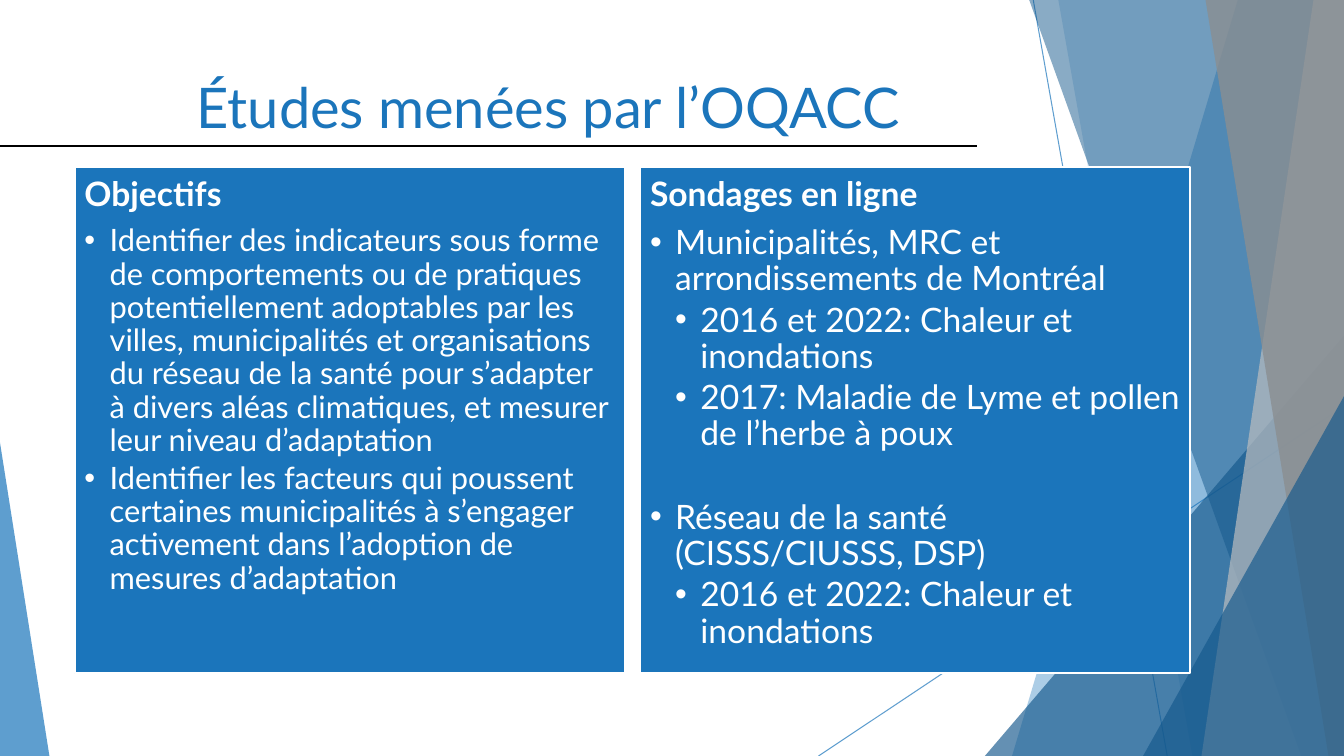
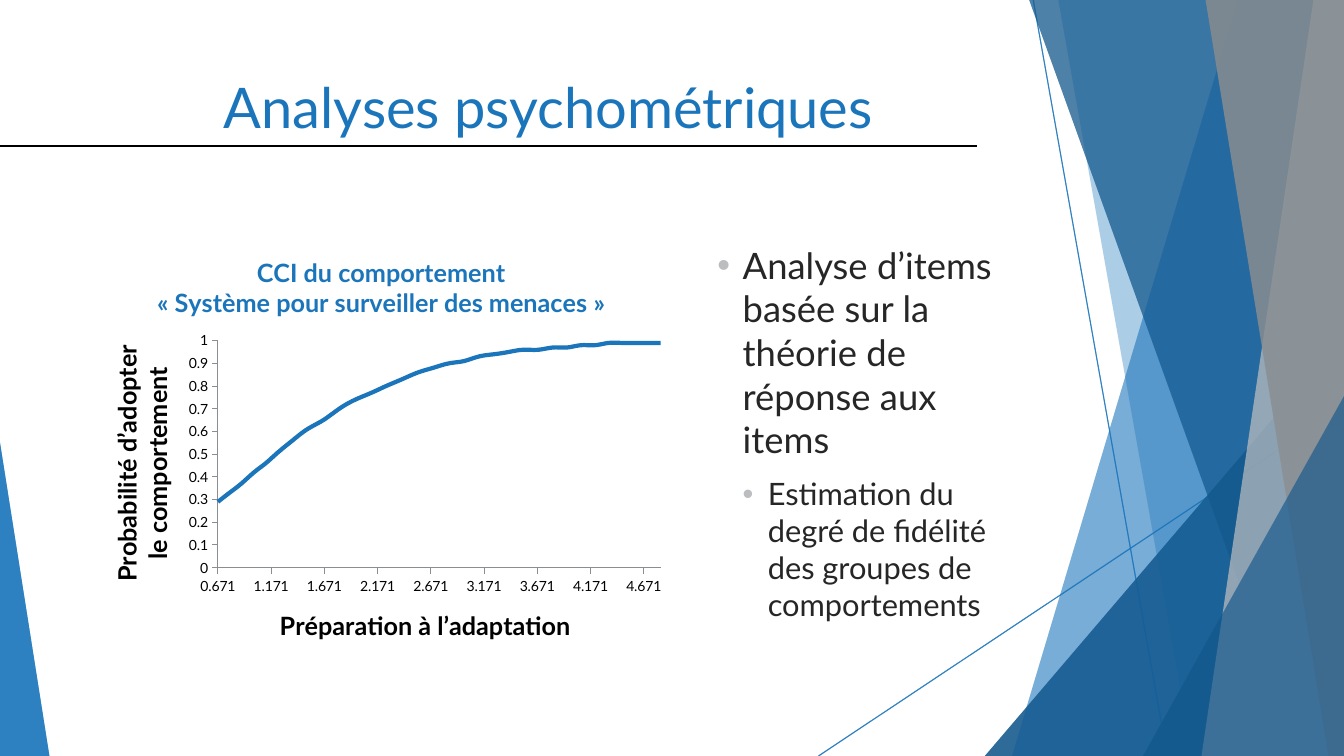
from lxml import etree
from pptx import Presentation
from pptx import util as u
from pptx.chart import data
from pptx.dml.color import RGBColor
from pptx.enum import chart as ch, shapes, text
from pptx.oxml import ns

BLUE = RGBColor(0x1B, 0x75, 0xBB)
NAVY = RGBColor(0x14, 0x58, 0x8C)
SILVER = RGBColor(0xBB, 0xBD, 0xBF)
GREY = RGBColor(0x8A, 0x8E, 0x91)
INK = RGBColor(0x26, 0x26, 0x26)
BLACK = RGBColor(0, 0, 0)
WHITE = RGBColor(0xFF, 0xFF, 0xFF)
FONT = "Lato"
W, H = u.Inches(13.333), u.Inches(7.5)
MARGIN = 5.55
TITLE_BOX = (MARGIN, 8.93, 70.5, 19.2)
CARD = (MARGIN, 22.13, 40.95, 66.93)
CARD_PITCH = 42.08
BODY_TOP = 31.47
CHART_BOX = (6.68, BODY_TOP, 43.35, 56.67)
TEXT_BOX = (52.65, BODY_TOP, 24, 56.53)
PLOT_SHARES = {"x": 0.22, "y": 0.24, "w": 0.76, "h": 0.53}

LINES = [(76.88, 0, 86.85, 100), (100, 53.73, 60.9, 100)]
BACK_BANDS = [(92.1, 75.3, BLUE, 36), (78.75, 88.73, BLUE, 20)]
FRONT_BANDS = [(76.58, 96.83, NAVY, 50), (97.73, 89.4, SILVER, 70), (89.7, 98.85, GREY, 80)]

OBJECTIVES = [
    (1, "Identifier des indicateurs sous forme de comportements ou de pratiques "
        "potentiellement adoptables par les villes, municipalités et organisations du "
        "réseau de la santé pour s’adapter à divers aléas climatiques, et mesurer leur "
        "niveau d’adaptation", 0),
    (1, "Identifier les facteurs qui poussent certaines municipalités à s’engager "
        "activement dans l’adoption de mesures d’adaptation", 0),
]
SURVEYS = [
    (1, "Municipalités, MRC et arrondissements de Montréal", 0),
    (2, "2016 et 2022: Chaleur et inondations", 0),
    (2, "2017: Maladie de Lyme et pollen de l’herbe à poux", 0),
    (1, "Réseau de la santé (CISSS/CIUSSS, DSP)", 30),
    (2, "2016 et 2022: Chaleur et inondations", 0),
]
CARDS = [("Objectifs", OBJECTIVES, 22), ("Sondages en ligne", SURVEYS, 24)]
READINESS = [0.671, 0.78, 0.89, 1.01, 1.12, 1.24, 1.37, 1.51, 1.66, 1.81, 1.96,
             2.11, 2.25, 2.4, 2.55, 2.69, 2.84, 2.98, 3.12, 3.26, 3.4, 3.54,
             3.68, 3.82, 3.95, 4.08, 4.21, 4.34, 4.47, 4.6, 4.72, 4.83]
PROBABILITY = [0.29, 0.33, 0.37, 0.42, 0.46, 0.51, 0.56, 0.61, 0.65, 0.7, 0.74,
               0.77, 0.8, 0.83, 0.86, 0.88, 0.9, 0.91, 0.93, 0.94, 0.95, 0.96,
               0.96, 0.97, 0.97, 0.98, 0.98, 0.99, 0.99, 0.99, 0.99, 0.99]


def across(share):
    return int(W * share / 100)


def down(share):
    return int(H * share / 100)


def box(x, y, w, h):
    return across(x), down(y), across(w), down(h)


def assign(obj, **values):
    for name, value in values.items():
        setattr(obj, name, value)


def style_font(font, size, color, bold=False):
    assign(font, name=FONT, size=u.Pt(size), bold=bold)
    font.color.rgb = color


def set_alpha(sp, alpha):
    color = sp.element.spPr.find(".//" + ns.qn("a:srgbClr"))
    etree.SubElement(color, ns.qn("a:alpha"), val=str(alpha * 1000))


def paint(sp, color, alpha):
    sp.shadow.inherit = False
    sp.fill.solid()
    sp.fill.fore_color.rgb = color
    sp.line.fill.background()
    set_alpha(sp, alpha)


def add_line(tree, x1, y1, x2, y2, color, width):
    sp = tree.add_connector(shapes.MSO_CONNECTOR.STRAIGHT,
                            across(x1), down(y1), across(x2), down(y2))
    sp.line.color.rgb = color
    sp.line.width = u.Pt(width)
    etree.SubElement(sp.element.spPr, ns.qn("a:effectLst"))
    return sp


def add_band(tree, top_x, bottom_x, color, alpha):
    outline = tree.build_freeform(across(top_x), 0)
    outline.add_line_segments([(W, 0), (W, H), (across(bottom_x), H)], close=True)
    paint(outline.convert_to_shape(), color, alpha)


def add_triangle(tree, left, top, width, apex, color, alpha):
    sp = tree.add_shape(shapes.MSO_SHAPE.ISOSCELES_TRIANGLE,
                        *box(left, top, width, 100 - top))
    sp.adjustments[0] = apex
    paint(sp, color, alpha)


def add_facets(s):
    group = s.shapes.add_group_shape()
    tree = group.shapes
    for ends in LINES:
        set_alpha(add_line(tree, *ends, BLUE, 0.75), 70)
    for band in BACK_BANDS:
        add_band(tree, *band)
    add_triangle(tree, 73.28, 44.4, 26.72, 1, NAVY, 66)
    for band in FRONT_BANDS:
        add_band(tree, *band)
    add_triangle(tree, 85.05, 52.4, 14.95, 1, NAVY, 66)
    add_triangle(tree, 0, 58.53, 3.68, 0, BLUE, 70)
    return group


def decorate_layout(layout, s):
    rule = add_line(s.shapes, 0, 19.33, 72.68, 19.33, BLACK, 1)
    for position, sp in enumerate((add_facets(s), rule), start=2):
        layout.shapes.element.insert(position, sp.element)


def set_title(s, words):
    sp = s.shapes.title
    left, top, width, height = box(*TITLE_BOX)
    assign(sp, left=left, top=top, width=width, height=height)
    tf = sp.text_frame
    tf.text = words
    assign(tf, vertical_anchor=text.MSO_ANCHOR.TOP, word_wrap=True)
    p = tf.paragraphs[0]
    p.alignment = text.PP_ALIGN.CENTER
    style_font(p.runs[0].font, 40, BLUE)


def add_paragraph(tf, words, size, color, level=0, bold=False, bullet_color=None, **spacing):
    p = tf.paragraphs[0] if not tf.text else tf.add_paragraph()
    p.alignment = text.PP_ALIGN.LEFT
    if level:
        pPr = p._p.get_or_add_pPr()
        pPr.set("marL", str(u.Inches(0.25 * level)))
        pPr.set("indent", str(-u.Inches(0.25)))
        if bullet_color:
            holder = etree.SubElement(pPr, ns.qn("a:buClr"))
            etree.SubElement(holder, ns.qn("a:srgbClr"), val=str(bullet_color))
        etree.SubElement(pPr, ns.qn("a:buFont"), typeface="Arial")
        etree.SubElement(pPr, ns.qn("a:buChar"), char="•")
    assign(p, **spacing)
    r = p.add_run()
    r.text = words
    style_font(r.font, size, color, bold)


def add_card(s, column, heading, items, size):
    x, y, w, h = CARD
    sp = s.shapes.add_shape(shapes.MSO_SHAPE.RECTANGLE, *box(x + column * CARD_PITCH, y, w, h))
    sp.shadow.inherit = False
    sp.fill.solid()
    sp.fill.fore_color.rgb = BLUE
    sp.line.color.rgb = WHITE
    sp.line.width = u.Pt(1.5)
    tf = sp.text_frame
    inset = u.Inches(0.1)
    assign(tf, word_wrap=True, vertical_anchor=text.MSO_ANCHOR.TOP, margin_left=inset,
           margin_right=inset, margin_top=inset, margin_bottom=inset)
    add_paragraph(tf, heading, 24, WHITE, bold=True, line_spacing=0.9, space_after=u.Pt(8.4))
    for level, words, gap in items:
        add_paragraph(tf, words, size, WHITE, level, line_spacing=0.9,
                      space_before=u.Pt(gap), space_after=u.Pt(size * 0.15))


def write_chart_title(tf, words, color):
    tf.text = words
    for p in tf.paragraphs:
        style_font(p.runs[0].font, 18, color, True)


def format_axis(axis, words, low, high, step):
    assign(axis, minimum_scale=low, maximum_scale=high, major_unit=step,
           has_major_gridlines=False, major_tick_mark=ch.XL_TICK_MARK.OUTSIDE,
           minor_tick_mark=ch.XL_TICK_MARK.NONE)
    axis.format.line.color.rgb = GREY
    style_font(axis.tick_labels.font, 10, BLACK)
    write_chart_title(axis.axis_title.text_frame, words, BLACK)


def place_plot(chart):
    area = chart.element.find(".//" + ns.qn("c:plotArea"))
    for old in area.findall(ns.qn("c:layout")):
        area.remove(old)
    layout = etree.Element(ns.qn("c:layout"))
    area.insert(0, layout)
    manual = etree.SubElement(layout, ns.qn("c:manualLayout"))
    settings = {"layoutTarget": "inner", "xMode": "edge", "yMode": "edge", **PLOT_SHARES}
    for name, value in settings.items():
        etree.SubElement(manual, ns.qn("c:" + name), val=str(value))


def add_curve(s):
    cd = data.XyChartData()
    points = cd.add_series("Series 1")
    for x, y in zip(READINESS, PROBABILITY):
        points.add_data_point(x, y)
    chart = s.shapes.add_chart(ch.XL_CHART_TYPE.XY_SCATTER_SMOOTH_NO_MARKERS,
                               *box(*CHART_BOX), cd).chart
    chart.has_legend = False
    style_font(chart.font, 10, BLACK)
    write_chart_title(chart.chart_title.text_frame,
                      "CCI du comportement\n«\u00a0Système pour surveiller des menaces\u00a0»", BLUE)
    format_axis(chart.category_axis, "Préparation à l’adaptation", 0.671, 4.83, 0.5)
    format_axis(chart.value_axis, "Probabilité d’adopter\nle comportement", 0, 1, 0.1)
    plot = chart.plots[0]
    plot.vary_by_categories = False
    line = plot.series[0].format.line
    line.color.rgb = BLUE
    line.width = u.Pt(3)
    chart.element.find(".//" + ns.qn("c:smooth")).set("val", "1")
    place_plot(chart)


def add_analysis(s):
    tf = s.shapes.add_textbox(*box(*TEXT_BOX)).text_frame
    tf.word_wrap = True
    add_paragraph(tf, "Analyse d’items basée sur la théorie de réponse aux items",
                  26, INK, 1, bullet_color=SILVER)
    add_paragraph(tf, "Estimation du degré de fidélité des groupes de comportements",
                  22, INK, 2, bullet_color=SILVER, space_before=u.Pt(10))


def main():
    prs = Presentation()
    assign(prs, slide_width=W, slide_height=H)
    layout = prs.slide_layouts[5]

    s = prs.slides.add_slide(layout)
    decorate_layout(layout, s)
    set_title(s, "Études menées par l’OQACC")
    for column, card in enumerate(CARDS):
        add_card(s, column, *card)

    s = prs.slides.add_slide(layout)
    add_facets(s)
    set_title(s, "Analyses psychométriques")
    add_analysis(s)
    add_curve(s)

    prs.save("out.pptx")


if __name__ == "__main__":
    main()
